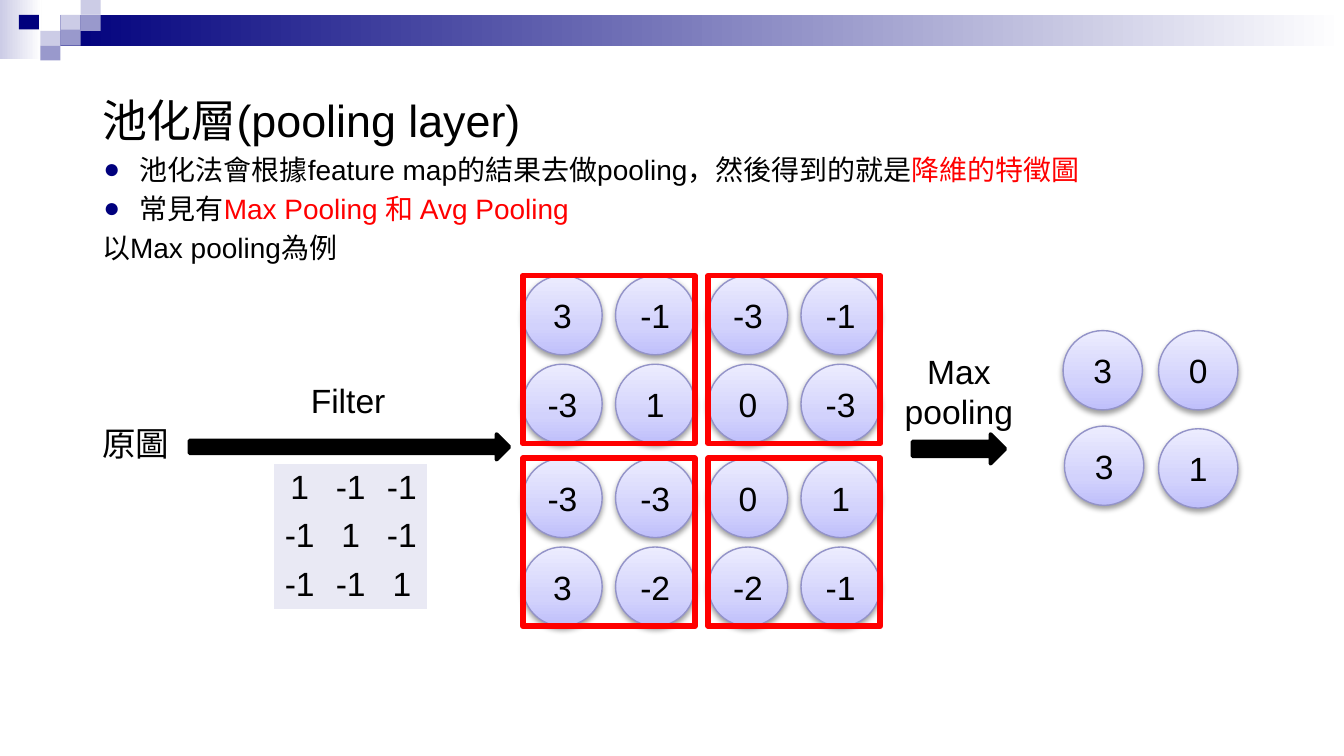
from pptx import Presentation
from pptx.dml.color import RGBColor
from pptx.enum.shapes import MSO_SHAPE
from pptx.enum.text import MSO_ANCHOR, MSO_AUTO_SIZE, PP_ALIGN
from pptx.oxml import parse_xml
from pptx.oxml.ns import nsdecls, qn
from pptx.util import Inches, Pt

COLORS = {
    "black": "000000", "red": "FF0000", "navy": "00007D", "mid": "9999CC",
    "pale": "CCCCE6", "white": "FFFFFF", "cell": "E9E9F4", "rim": "9393C8",
    "low": "BFBFFB", "middle": "D2D2FC", "high": "ECECFE",
}


def add_figure(kind, place, fill=None, line=None, width=0.75, angle=0):
    """Add a shape; fill is a colour name or a list of (percent, colour name)."""
    shape = slide.shapes.add_shape(kind, *map(Inches, place))
    shape.shadow.inherit = False
    if isinstance(fill, list):
        stops = "".join(
            f'<a:gs pos="{percent * 1000}"><a:srgbClr val="{COLORS[name]}"/></a:gs>'
            for percent, name in fill)
        shape.fill.background()
        properties = shape._element.spPr
        properties.replace(properties.find(qn("a:noFill")), parse_xml(
            f'<a:gradFill {nsdecls("a")} rotWithShape="1"><a:gsLst>{stops}</a:gsLst>'
            f'<a:lin ang="{angle * 60000}" scaled="0"/></a:gradFill>'))
    elif fill:
        shape.fill.solid()
        shape.fill.fore_color.rgb = RGBColor.from_string(COLORS[fill])
    else:
        shape.fill.background()
    if line:
        shape.line.color.rgb = RGBColor.from_string(COLORS[line])
        shape.line.width = Pt(width)
    else:
        shape.line.fill.background()
    return shape


def write_text(frame, spans, size=18, align=PP_ALIGN.CENTER, para=None):
    """Write (text, colour name) spans into a paragraph of the frame."""
    margins = {"margin_left": 0.07, "margin_right": 0.07,
               "margin_top": 0.04, "margin_bottom": 0.04}
    for name, value in margins.items():
        setattr(frame, name, Inches(value))
    frame.word_wrap = True
    para = para or frame.paragraphs[0]
    para.alignment = align
    for text, color in spans:
        span = para.add_run()
        span.text = text
        span.font.name = "Arial"
        span.font.size = Pt(size)
        span.font.color.rgb = RGBColor.from_string(COLORS[color])


# Widescreen page, 16 to 9
deck = Presentation()
deck.slide_width = Inches(10)
deck.slide_height = Inches(10) * 9 // 16
slide = deck.slides.add_slide(deck.slide_layouts[1])
title, body = slide.placeholders
title._element.getparent().remove(title._element)

# Header band and squares
header = [
    ((0, 0, 0.31, 0.44), [(0, "pale"), (100, "white")]),
    ((0.45, 0.11, 9.55, 0.23), [(0, "navy"), (100, "white")]),
    ((0.45, 0.11, 0.15, 0.12), "pale"),
    ((0.6, 0, 0.15, 0.11), "pale"),
    ((0.6, 0.11, 0.15, 0.12), "mid"),
    ((0.3, 0.23, 0.15, 0.11), "pale"),
    ((0.14, 0.11, 0.15, 0.11), "navy"),
    ((0.45, 0.22, 0.15, 0.12), "mid"),
    ((0.3, 0.34, 0.15, 0.11), "mid"),
]
for place, fill in header:
    add_figure(MSO_SHAPE.RECTANGLE, place, fill)

# Heading and explanation
body.left, body.top, body.width, body.height = map(Inches, (0.69, 0.65, 7.65, 4.23))
frame = body.text_frame
frame.auto_size = MSO_AUTO_SIZE.NONE
frame.vertical_anchor = MSO_ANCHOR.TOP
lines = [
    (24, 0, False, [("池化層(pooling layer)", "black")]),
    (15, 3, True, [("池化法會根據feature map的結果去做pooling，然後得到的就是", "black"),
                   ("降維的特徵圖", "red")]),
    (15, 3, True, [("常見有", "black"), ("Max Pooling 和 Avg Pooling", "red")]),
    (15, 3, False, [("以Max pooling為例", "black")]),
]
for index, (size, before, bulleted, spans) in enumerate(lines):
    para = frame.add_paragraph() if index else frame.paragraphs[0]
    write_text(frame, spans, size, PP_ALIGN.LEFT, para)
    para.space_before = Pt(before)
    properties = para._p.get_or_add_pPr()
    properties.set("marL", str(Inches(0.28) if bulleted else 0))
    properties.set("indent", str(Inches(-0.27) if bulleted else 0))
    if bulleted:
        properties.append(parse_xml(
            f'<a:buClr {nsdecls("a")}><a:srgbClr val="{COLORS["navy"]}"/></a:buClr>'))
        properties.append(parse_xml(f'<a:buChar {nsdecls("a")} char="●"/>'))
    else:
        properties.append(parse_xml(f'<a:buNone {nsdecls("a")}/>'))

# Filter table: 1 on the diagonal, -1 elsewhere
table = slide.shapes.add_table(3, 3, *map(Inches, (2.04, 3.45, 1.14, 1.08))).table
table.first_row = table.horz_banding = False
NO_STYLE = "{2D5ABB26-0587-4C30-8999-92F81FD0307C}"
table._tbl.tblPr.find(qn("a:tableStyleId")).text = NO_STYLE
for row in range(3):
    for column in range(3):
        cell = table.cell(row, column)
        cell.fill.solid()
        cell.fill.fore_color.rgb = RGBColor.from_string(COLORS["cell"])
        write_text(cell.text_frame, [("1" if row == column else "-1", "black")])
        cell.margin_left = cell.margin_right = Inches(0.07)
        cell.margin_top = cell.margin_bottom = Inches(0.04)

# Feature map and pooled values
feature_map = [
    ["3", "-1", "-3", "-1"],
    ["-3", "1", "0", "-3"],
    ["-3", "-3", "0", "1"],
    ["3", "-2", "-2", "-1"],
]
circles = [(3.89 + 0.69 * column, 2.05 + 0.66 * row + 0.04 * (row // 2), value)
           for row, values in enumerate(feature_map)
           for column, value in enumerate(values)]
circles += [(7.91, 2.46, "3"), (8.62, 2.46, "0"), (7.92, 3.17, "3"), (8.62, 3.19, "1")]
for left, top, value in circles:
    circle = add_figure(MSO_SHAPE.OVAL, (left, top, 0.59, 0.59),
                        [(0, "low"), (35, "middle"), (100, "high")], "rim", angle=270)
    circle._element.spPr.find(qn("a:effectLst")).append(parse_xml(
        f'<a:outerShdw {nsdecls("a")} blurRad="{Pt(3.1)}" dist="{Pt(1.6)}" dir="5400000" '
        f'rotWithShape="0"><a:srgbClr val="{COLORS["black"]}"><a:alpha val="38000"/>'
        '</a:srgbClr></a:outerShdw>'))
    circle.text_frame.vertical_anchor = MSO_ANCHOR.MIDDLE
    write_text(circle.text_frame, [(value, "black")])

# Pooling windows
for top in (2.05, 3.41):
    for left in (3.89, 5.27):
        add_figure(MSO_SHAPE.RECTANGLE, (left, top, 1.28, 1.25), line="red", width=3)

# Step arrows and labels
for place in ((1.41, 3.23, 2.38, 0.19), (6.79, 3.23, 0.69, 0.22)):
    add_figure(MSO_SHAPE.RIGHT_ARROW, place, "black", "black", 2)
labels = [
    ("Filter ", (2.03, 2.79, 1.19, 0.38)),
    ("原圖 ", (0.51, 3.11, 1.06, 0.38)),
    ("Max pooling", (6.47, 2.57, 1.33, 0.68)),
]
for text, place in labels:
    box = slide.shapes.add_textbox(*map(Inches, place))
    write_text(box.text_frame, [(text, "black")])

deck.save("out.pptx")
